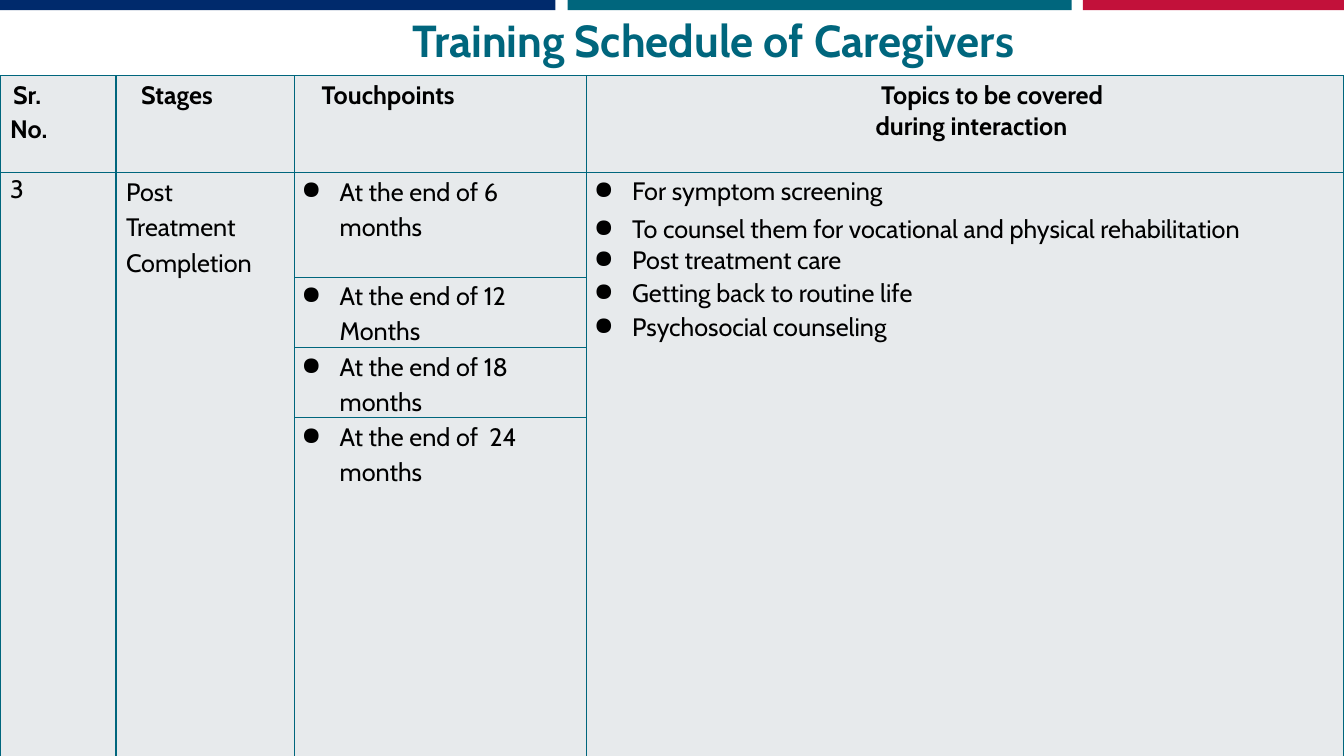
from lxml import etree
from pptx import Presentation
from pptx.dml.color import RGBColor
from pptx.enum import shapes, text
from pptx.oxml import ns
from pptx.util import Inches, Pt

# Content
TITLE = "Training Schedule of Caregivers"
STAGE = ("3", "Post Treatment Completion")
TOUCHPOINTS = [
    "At the end of 6 months",
    "At the end of 12 Months",
    "At the end of 18 months",
    "At the end of  24 months",
]
# Topic, line spacing, space before in points
TOPICS = [
    ("For symptom screening", 1.12, 0),
    ("To counsel them for vocational and physical rehabilitation", 1.14, 2),
    ("Post treatment care", 1, 0.1),
    ("Getting back to routine life", 1, 2),
    ("Psychosocial counseling", 1, 1.9),
]

# Look
COLORS = {"navy": "002A6C", "teal": "00667D", "red": "C2113A",
          "cell": "E7EAEC", "text": "000000"}
FONT = "Cabin"
BARS = [(0, 5.51, "navy"), (5.63, 5, "teal"), (10.74, 2.6, "red")]
BAR_HEIGHT = 0.1
COLUMNS = [1.15, 1.77, 2.9, 7.51]
ROWS = [0.96, 1.04, 0.7, 0.69, 3.37]
TABLE_TOP = 0.75
CENTER = text.PP_ALIGN.CENTER


def rgb(name):
    return RGBColor.from_string(COLORS[name])


def add_text(frame, content, size=18, color="text", bold=False, align=None,
             left=0, right=0, first=0, spacing=1.0, before=0, bullet=None):
    """Write one paragraph, reusing the frame's first one while it is empty."""
    paragraph = frame.paragraphs[0]
    if paragraph.runs:
        paragraph = frame.add_paragraph()
    run = paragraph.add_run()
    run.text = content
    run.font.name, run.font.size, run.font.bold = FONT, Pt(size), bold
    run.font.color.rgb = rgb(color)
    paragraph.alignment = align or text.PP_ALIGN.LEFT
    paragraph.line_spacing = spacing
    paragraph.space_before = Pt(before)
    properties = paragraph._p.get_or_add_pPr()
    for key, value in (("marL", left), ("marR", right), ("indent", first)):
        properties.set(key, str(Inches(value)))
    if bullet:
        etree.SubElement(properties, ns.qn("a:buChar")).set("char", bullet)


def add_bullet(cell, content, **formatting):
    add_text(cell.text_frame, content, left=0.38, first=-0.38, bullet="●",
             **formatting)


def format_cell(cell, margin):
    cell.fill.solid()
    cell.fill.fore_color.rgb = rgb("cell")
    cell.margin_left = cell.margin_right = Inches(margin)
    cell.margin_top = cell.margin_bottom = 0
    properties = cell._tc.get_or_add_tcPr()
    for index, side in enumerate(("lnL", "lnR", "lnT", "lnB")):
        line = etree.Element(ns.qn("a:" + side), w=str(Pt(1)))
        fill = etree.SubElement(line, ns.qn("a:solidFill"))
        etree.SubElement(fill, ns.qn("a:srgbClr")).set("val", COLORS["teal"])
        properties.insert(index, line)


def add_bars(slide):
    for left, width, color in BARS:
        bar = slide.shapes.add_shape(
            shapes.MSO_SHAPE.RECTANGLE, Inches(left), 0,
            Inches(width), Inches(BAR_HEIGHT))
        bar.shadow.inherit = False
        bar.fill.solid()
        bar.fill.fore_color.rgb = rgb(color)
        bar.line.fill.background()


def add_title(slide):
    title = slide.shapes.title
    title.left, title.top = Inches(2.98), Inches(0.14)
    title.width, title.height = Inches(7.63), Inches(0.59)
    frame = title.text_frame
    frame.word_wrap = False
    frame.auto_size = text.MSO_AUTO_SIZE.NONE
    frame.vertical_anchor = text.MSO_ANCHOR.TOP
    add_text(frame, TITLE, size=32, color="teal", bold=True, align=CENTER,
             left=0.57, spacing=0.9)


def add_schedule(slide):
    graphic = slide.shapes.add_table(
        len(ROWS), len(COLUMNS), 0, Inches(TABLE_TOP),
        Inches(sum(COLUMNS)), Inches(sum(ROWS)))
    table = graphic.table
    for column, width in zip(table.columns, COLUMNS):
        column.width = Inches(width)
    for row, height in zip(table.rows, ROWS):
        row.height = Inches(height)
    for row in range(len(ROWS)):
        for column in range(len(COLUMNS)):
            bulleted = row > 0 and column > 1
            format_cell(table.cell(row, column), 0.07 if bulleted else 0.03)
    for column in (0, 1, 3):
        table.cell(1, column).merge(table.cell(len(ROWS) - 1, column))

    # Header row
    number, stages, touchpoints, topics = (
        table.cell(0, column).text_frame for column in range(len(COLUMNS)))
    add_text(number, "Sr.", bold=True, left=0.1, spacing=1.15)
    add_text(number, "No.", bold=True, left=0.07, before=2)
    add_text(stages, "Stages", bold=True, left=0.22, spacing=1.15)
    add_text(touchpoints, "Touchpoints", bold=True, left=0.24, spacing=1.15)
    add_text(topics, "Topics to be covered", bold=True, align=CENTER,
             left=0.22, first=0.53, right=0.22, spacing=1.14)
    add_text(topics, "during interaction", bold=True, align=CENTER,
             left=0.34, right=0.22)

    # Stage, its touchpoints and its topics
    add_text(table.cell(1, 0).text_frame, STAGE[0], left=0.07, spacing=1.05)
    add_text(table.cell(1, 1).text_frame, STAGE[1], left=0.07, right=0.2,
             spacing=1.15)
    for row, touchpoint in enumerate(TOUCHPOINTS, start=1):
        add_bullet(table.cell(row, 2), touchpoint, right=0.2, spacing=1.14)
    for topic, spacing, before in TOPICS:
        add_bullet(table.cell(1, 3), topic, spacing=spacing, before=before)


def main():
    presentation = Presentation()
    presentation.slide_width = Inches(13.33)
    presentation.slide_height = Inches(7.5)
    slide = presentation.slides.add_slide(presentation.slide_layouts[5])
    add_bars(slide)
    add_schedule(slide)
    add_title(slide)
    presentation.save("out.pptx")


if __name__ == "__main__":
    main()
